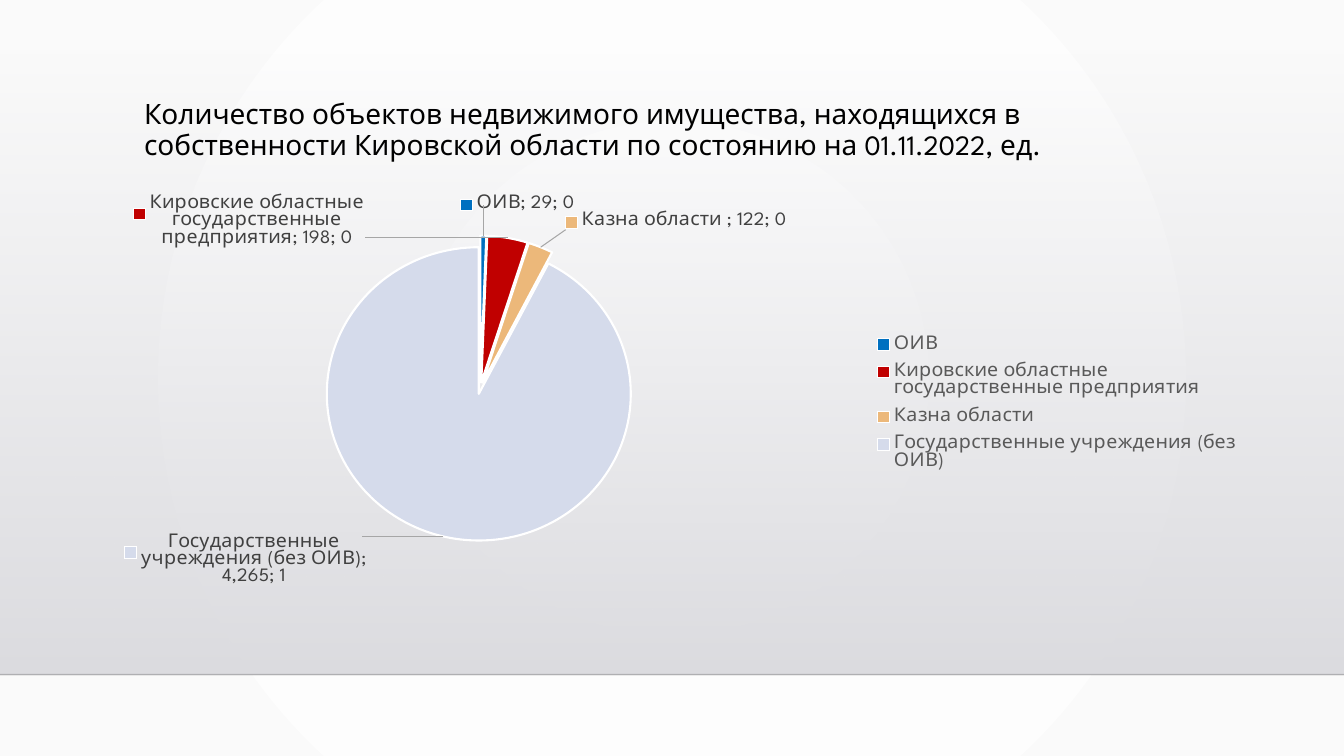
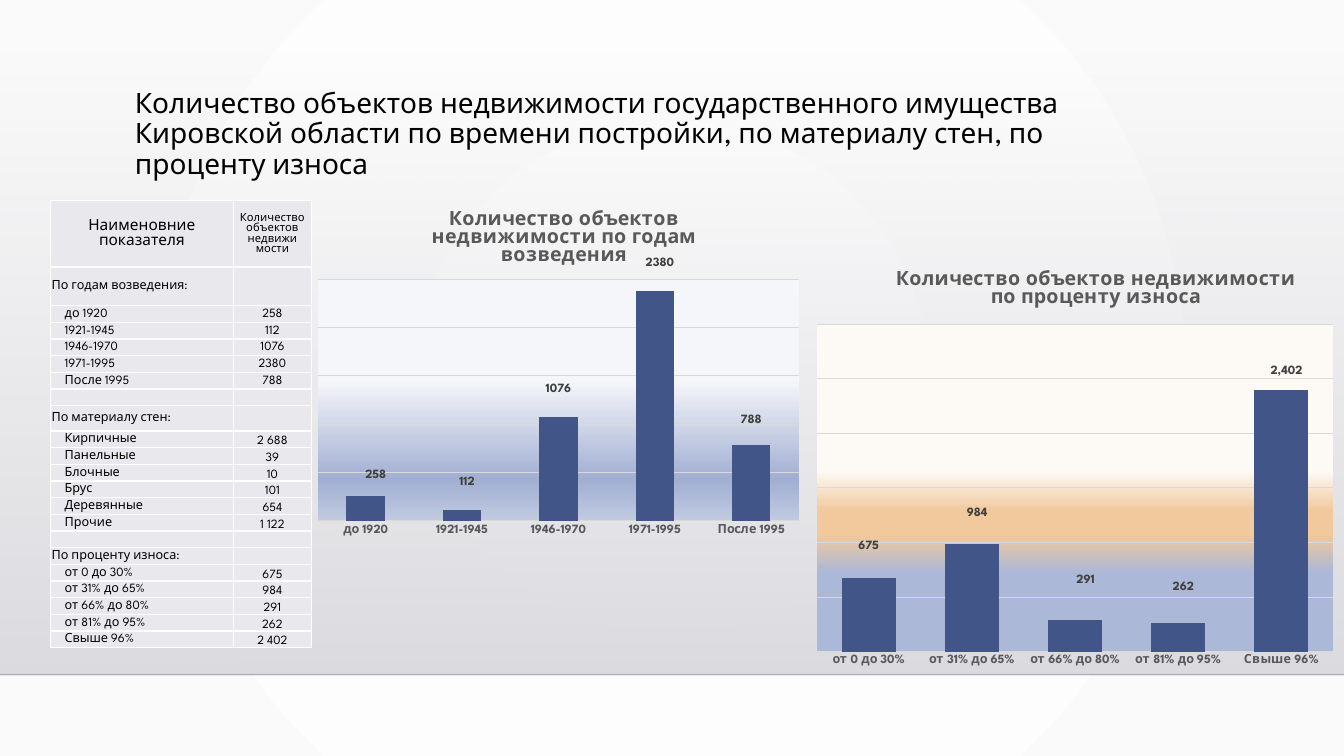
from collections import namedtuple
from dataclasses import dataclass

from lxml.etree import SubElement
from pptx import Presentation
from pptx.chart.data import CategoryChartData
from pptx.dml.color import RGBColor
from pptx.enum.chart import XL_CHART_TYPE, XL_LABEL_POSITION, XL_LEGEND_POSITION, XL_TICK_MARK
from pptx.enum.shapes import MSO_CONNECTOR, MSO_SHAPE
from pptx.enum.text import MSO_ANCHOR, PP_ALIGN
from pptx.oxml import parse_xml
from pptx.oxml.ns import nsdecls, qn
from pptx.util import Cm, Pt

Box = namedtuple("Box", "left top width height")
Bars = namedtuple("Bars", "title names values gap top_value number_format "
                          "title_at plot_at gradient offsets")


@dataclass(frozen=True)
class Theme:
    font: str = "League Spartan"
    ink: str = "000000"
    muted: str = "595959"
    label: str = "404040"
    grid: str = "D9D9D9"
    white: str = "FFFFFF"
    cell: str = "E9E9ED"
    bar: str = "415588"
    slices: tuple = ("0070C0", "C00000", "ECB87A", "D5DBEB")
    backdrop: tuple = ((0, "FFFFFF", 100), (100, "FAFAFA", 100))
    band: tuple = ((0, "DCDCE0", 0), (100, "DEDEE2", 100))
    title_size: int = 20
    chart_title_size: int = 14
    pie_size: int = 14
    chart_size: int = 10
    small_size: int = 9
    header_sizes: tuple = (11, 8)


THEME = Theme()
DOWN = '<a:lin ang="5400000" scaled="0"/>'
RADIAL = '<a:path path="circle"><a:fillToRect l="50000" t="50000" r="50000" b="50000"/></a:path>'


# Shared helpers
def cm(box):
    return [Cm(length) for length in box]


def style(font, size, color=THEME.ink, bold=False):
    font.name, font.size, font.bold = THEME.font, Pt(size), bold
    font.color.rgb = RGBColor.from_string(color)


def gradient(stops, direction):
    marks = "".join(
        f'<a:gs pos="{pos * 1000}"><a:srgbClr val="{color}">'
        f'<a:alpha val="{alpha * 1000}"/></a:srgbClr></a:gs>' for pos, color, alpha in stops)
    return parse_xml(f'<a:gradFill {nsdecls("a")} rotWithShape="1">'
                     f'<a:gsLst>{marks}</a:gsLst>{direction}</a:gradFill>')


def swap_fill(properties, fill):
    properties.replace(properties.find(qn("a:solidFill")), fill)


def manual_layout(at, inner=False):
    target = '<c:layoutTarget val="inner"/>' if inner else ""
    modes = '<c:xMode val="edge"/><c:yMode val="edge"/>' if inner or len(at) == 4 else ""
    sizes = "".join(f'<c:{tag} val="{value}"/>' for tag, value in zip("xywh", at))
    return parse_xml(f'<c:layout {nsdecls("c")}><c:manualLayout>{target}{modes}{sizes}'
                     '</c:manualLayout></c:layout>')


def place(part, layout, after=None):
    for old in part.findall(qn("c:layout")):
        part.remove(old)
    if after:
        part.find(qn(after)).addnext(layout)
    else:
        part.insert(0, layout)


def chart_part(chart, tag):
    return chart.element.find(".//" + qn(tag))


def add_data_chart(slide, kind, box, names, values):
    data = CategoryChartData()
    data.categories = names
    data.add_series("Series 1", values)
    chart = slide.shapes.add_chart(kind, *cm(box), data).chart
    style(chart.font, THEME.chart_size)
    chart.has_legend = chart.has_title = False
    return chart


def label_points(chart, offsets, position, size, number_format, bold=False, shown=()):
    """Label each point, moved from its usual place by a share of the chart."""
    series = chart.plots[0].series[0]
    for index in range(len(offsets)):
        label = series.points[index].data_label
        label.position = position
        style(label.font, size, THEME.label, bold)
    for element, offset in zip(chart.element.iter(qn("c:dLbl")), offsets):
        place(element, manual_layout(offset), "c:idx")
        element.find(qn("c:layout")).addnext(parse_xml(
            f'<c:numFmt {nsdecls("c")} formatCode="{number_format}" sourceLinked="0"/>'))
        for tag in shown:
            element.find(qn(tag)).set("val", "1")
        if shown:
            SubElement(element, qn("c:separator")).text = "; "
    labels = series.data_labels
    labels.number_format, labels.number_format_is_linked = number_format, False
    style(labels.font, size, THEME.label, bold)
    leaders = chart_part(chart, "c:showLeaderLines")
    if leaders is not None:
        leaders.set("val", "1" if shown else "0")


# Backdrop and title, the same on every slide
def add_base(prs, title, title_box):
    slide = prs.slides.add_slide(prs.slide_layouts[6])
    slide.background.fill.solid()
    swap_fill(slide.element.find(".//" + qn("p:bgPr")), gradient(THEME.backdrop, RADIAL))

    band_box = Box(0, 1.3, 33.87, 15.7)
    band = slide.shapes.add_shape(MSO_SHAPE.RECTANGLE, *cm(band_box))
    band.shadow.inherit = False
    band.line.fill.background()
    band.fill.solid()
    swap_fill(band.element.spPr, gradient(THEME.band, DOWN))

    floor = Cm(band_box.top + band_box.height)
    edge = slide.shapes.add_connector(MSO_CONNECTOR.STRAIGHT, 0, floor, Cm(band_box.width), floor)
    edge.line.width = Pt(1)
    edge.line.color.rgb = RGBColor.from_string("000001")
    SubElement(edge.element.find(".//" + qn("a:srgbClr")), qn("a:alpha")).set("val", "20000")
    SubElement(edge.element.spPr, qn("a:effectLst"))

    frame = slide.shapes.add_textbox(*cm(title_box)).text_frame
    frame.word_wrap = True
    heading = frame.paragraphs[0]
    heading.text = title
    heading.line_spacing = 0.9
    style(heading.runs[0].font, THEME.title_size)
    return slide


# Pie with a legend on the right
def add_ownership_pie(slide, box, owners, offsets):
    chart = add_data_chart(slide, XL_CHART_TYPE.PIE, box, list(owners), list(owners.values()))
    plot = chart.plots[0]
    plot.vary_by_categories = True
    place(chart_part(chart, "c:plotArea"),
          manual_layout((0.055, 0.099, 0.515, 0.749), inner=True))
    chart_part(chart, "c:ser").find(qn("c:tx")).addnext(
        parse_xml(f'<c:explosion {nsdecls("c")} val="4"/>'))
    for index, color in enumerate(THEME.slices):
        look = plot.series[0].points[index].format
        look.fill.solid()
        look.fill.fore_color.rgb = RGBColor.from_string(color)
        look.line.color.rgb = RGBColor.from_string(THEME.white)
        look.line.width = Pt(1.5)
    label_points(chart, offsets, XL_LABEL_POSITION.BEST_FIT, THEME.pie_size, "#,##0",
                 shown=("c:showLegendKey", "c:showCatName", "c:showPercent"))
    chart_part(chart, "c:showLeaderLines").addnext(parse_xml(
        f'<c:leaderLines {nsdecls("c", "a")}><c:spPr><a:ln w="9525"><a:solidFill>'
        '<a:srgbClr val="A6A6A6"/></a:solidFill></a:ln></c:spPr></c:leaderLines>'))

    chart.has_legend = True
    chart.legend.position = XL_LEGEND_POSITION.RIGHT
    chart.legend.include_in_layout = False
    style(chart.legend.font, THEME.pie_size, THEME.muted)
    place(chart_part(chart, "c:legend"), manual_layout((0.655, 0.32, 0.33, 0.38)), "c:legendPos")


# Column chart on a gradient plot area
def add_bars(slide, box, bars):
    chart = add_data_chart(slide, XL_CHART_TYPE.COLUMN_CLUSTERED, box, bars.names, bars.values)
    plot = chart.plots[0]
    plot.vary_by_categories = False
    plot.gap_width = bars.gap
    fill = plot.series[0].format.fill
    fill.solid()
    fill.fore_color.rgb = RGBColor.from_string(THEME.bar)
    label_points(chart, bars.offsets, XL_LABEL_POSITION.OUTSIDE_END, THEME.small_size,
                 bars.number_format, bold=True)

    heading = chart.chart_title.text_frame
    heading.text = bars.title
    style(heading.paragraphs[0].runs[0].font, THEME.chart_title_size, THEME.muted, True)
    title_layout = manual_layout(bars.title_at)
    mode = title_layout[0]
    for tag in ("c:yMode", "c:xMode"):
        mode.insert(0, parse_xml(f'<{tag} {nsdecls("c")} val="edge"/>'))
    place(chart_part(chart, "c:title"), title_layout, "c:tx")

    names, scale = chart.category_axis, chart.value_axis
    names.major_tick_mark = names.minor_tick_mark = XL_TICK_MARK.NONE
    names.format.line.fill.background()
    style(names.tick_labels.font, THEME.small_size, THEME.muted, True)
    scale.visible = False
    scale.minimum_scale, scale.maximum_scale, scale.major_unit = 0, bars.top_value, 500
    grid = scale.major_gridlines.format.line
    grid.color.rgb = RGBColor.from_string(THEME.grid)
    grid.width = Pt(0.75)

    area = chart_part(chart, "c:plotArea")
    place(area, manual_layout(bars.plot_at, inner=True))
    SubElement(area, qn("c:spPr")).append(gradient(bars.gradient, DOWN))


# Table of groups, each under its own heading
def fill_cell(cell, text, size, indent=0.03, align=PP_ALIGN.LEFT, anchor=MSO_ANCHOR.MIDDLE):
    cell.fill.solid()
    cell.fill.fore_color.rgb = RGBColor.from_string(THEME.cell)
    cell.margin_left, cell.margin_right = Cm(indent), Cm(0.03)
    cell.margin_top, cell.margin_bottom = Cm(0.03), 0
    cell.vertical_anchor = anchor
    line = cell.text_frame.paragraphs[0]
    line.alignment = align
    if text:
        line.text = text
        style(line.runs[0].font, size)
    else:
        SubElement(line._p, qn("a:endParaRPr")).set("sz", str(size * 100))
    properties = cell._tc.get_or_add_tcPr()
    for index, side in enumerate(("lnL", "lnR", "lnT", "lnB")):
        properties.insert(index, parse_xml(
            f'<a:{side} {nsdecls("a")} w="12700"><a:solidFill>'
            f'<a:srgbClr val="{THEME.white}"/></a:solidFill></a:{side}>'))


def add_summary_table(slide, box, header, groups):
    rows = []
    for number, (heading, height, items) in enumerate(groups):
        if number:
            rows.append(("", "", 0.42, 0.03, MSO_ANCHOR.MIDDLE))
        rows.append((heading, "", height, 0.03, MSO_ANCHOR.MIDDLE))
        anchor = MSO_ANCHOR.BOTTOM if number else MSO_ANCHOR.MIDDLE
        rows += [(name, value, 0.42, 0.36, anchor) for name, value in items]

    table = slide.shapes.add_table(len(rows) + 1, 2, *cm(box)).table
    table.first_row = table.horz_banding = False
    for column, share in zip(table.columns, (0.7, 0.3)):
        column.width = Cm(round(box.width * share, 2))
    table.rows[0].height = Cm(1.68)
    for column, (text, size) in enumerate(zip(header, THEME.header_sizes)):
        fill_cell(table.cell(0, column), text, size, align=PP_ALIGN.CENTER)
    for index, (name, value, height, indent, anchor) in enumerate(rows, 1):
        table.rows[index].height = Cm(height)
        fill_cell(table.cell(index, 0), name, THEME.small_size, indent)
        fill_cell(table.cell(index, 1), value, THEME.small_size,
                  align=PP_ALIGN.CENTER, anchor=anchor)


# Content
OWNERS = {"ОИВ": 29, "Кировские областные государственные предприятия": 198,
          "Казна области ": 122, "Государственные учреждения (без ОИВ)": 4265}
OWNER_OFFSETS = ((0.03, -0.06), (-0.33, 0.02), (0.02, -0.03), (-0.07, -0.02))
YEARS = {"до 1920": 258, "1921-1945": 112, "1946-1970": 1076, "1971-1995": 2380, "После 1995": 788}
WALLS = {"Кирпичные": 2688, "Панельные": 39, "Блочные": 10, "Брус": 101,
         "Деревянные": 654, "Прочие": 1122}
WEAR = {"от 0 до 30%": 675, "от 31% до 65%": 984, "от 66% до 80%": 291,
        "от 81% до 95%": 262, "Свыше 96%": 2402}
YEAR_BARS = Bars(
    "Количество объектов недвижимости по годам возведения", list(YEARS), list(YEARS.values()),
    150, 2500, "General", (0.24, 0.03), (0.02, 0.24, 0.96, 0.69),
    ((42, "F5F6FA", 100), (83, "A1AFD2", 100), (100, "C0CAE1", 100)),
    ((0.02, -0.03), (0.01, -0.05), (0, -0.05), (0.01, -0.05), (0, -0.04)))
WEAR_BARS = Bars(
    "Количество объектов недвижимости по проценту износа", list(WEAR), list(WEAR.values()),
    91, 3000, "#,##0", (0.16, 0.03), (0.02, 0.17, 0.96, 0.78),
    ((45, "FDF9F4", 100), (57, "F1C99C", 100), (64, "F1C99C", 100), (76, "ABB8D7", 100)),
    ((0, -0.05), (0.01, -0.05), (0.02, -0.07), (0.01, -0.06), (0.01, -0.02)))


def spaced(items):
    return [(name, f"{value:,}".replace(",", " ")) for name, value in items.items()]


def main():
    prs = Presentation()
    prs.slide_width, prs.slide_height = Cm(33.87), Cm(19.05)

    ownership = add_base(prs, "Количество объектов недвижимого имущества, находящихся в "
                         "собственности Кировской области по состоянию на 01.11.2022, ед.",
                         Box(3.38, 2.41, 26.67, 2.92))
    add_ownership_pie(ownership, Box(3.15, 4.55, 28.65, 10.64), OWNERS, OWNER_OFFSETS)

    condition = add_base(prs, "Количество объектов недвижимости государственного имущества "
                         "Кировской области по времени постройки, по материалу стен, "
                         "по проценту износа", Box(3.15, 2.13, 26.67, 2.92))
    years = [(name, str(value)) for name, value in YEARS.items()]
    add_summary_table(condition, Box(1.27, 5.05, 6.58, 11.25),
                      ("Наименовние показателя", "Количество объектов недвижи мости"),
                      (("По годам возведения:", 0.97, years),
                       ("По материалу стен:", 0.64, spaced(WALLS)),
                       ("По проценту износа:", 0.42, spaced(WEAR))))
    add_bars(condition, Box(7.75, 4.93, 12.65, 8.81), YEAR_BARS)
    add_bars(condition, Box(20.32, 6.38, 13.54, 10.57), WEAR_BARS)
    prs.save("out.pptx")


if __name__ == "__main__":
    main()
